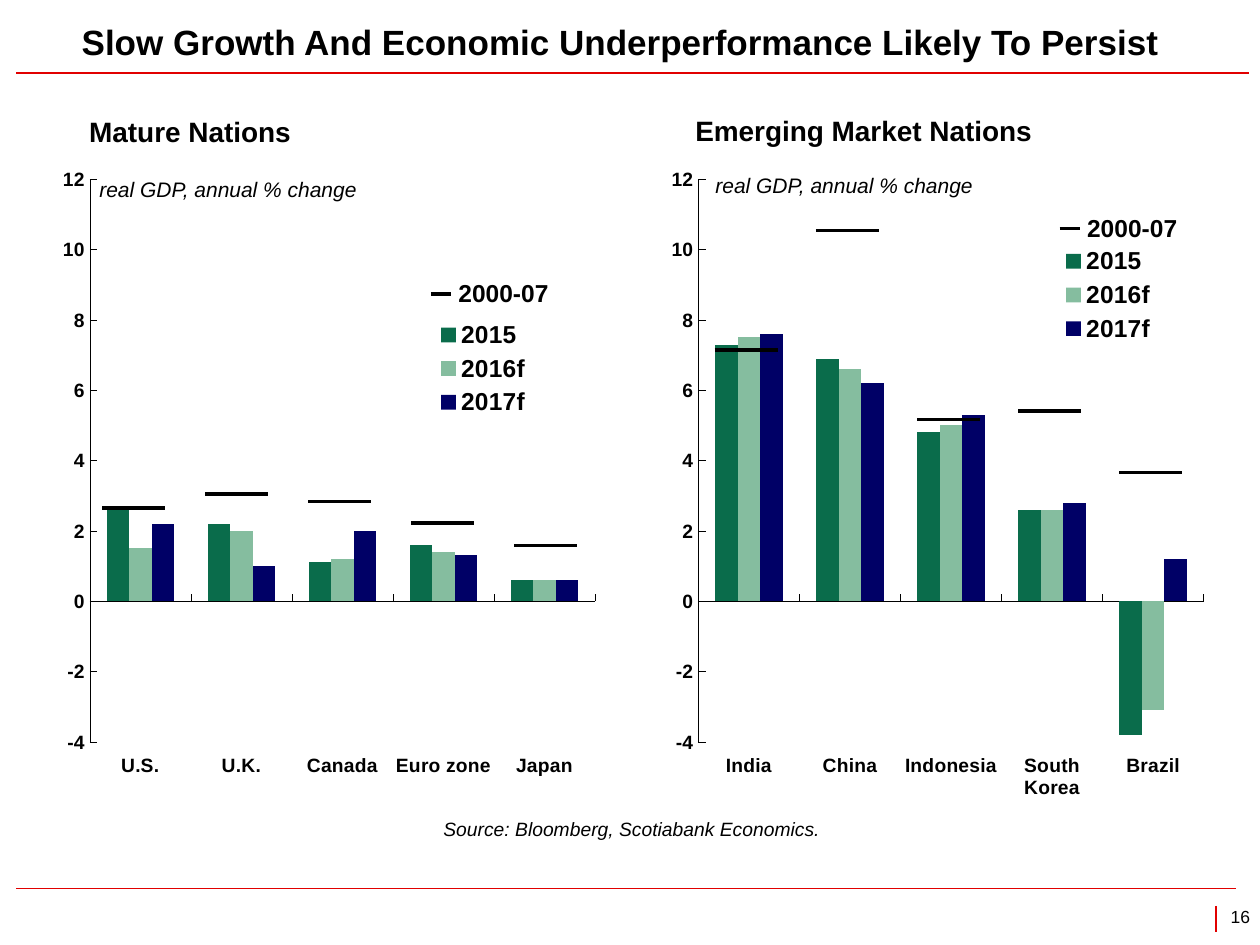
from dataclasses import dataclass

from lxml.etree import SubElement
from pptx import Presentation
from pptx.chart.data import CategoryChartData
from pptx.dml.color import RGBColor
from pptx.enum.chart import XL_CHART_TYPE, XL_LEGEND_POSITION, XL_TICK_LABEL_POSITION, XL_TICK_MARK
from pptx.enum.shapes import MSO_CONNECTOR
from pptx.enum.text import MSO_ANCHOR, PP_ALIGN
from pptx.oxml import parse_xml
from pptx.oxml.ns import nsdecls, qn
from pptx.util import Inches, Pt

COLUMNS, ROWS = 100, 75
CELL = Inches(0.1)
FONT = "Arial"
COLORS = {"text": "000000", "rule": "E10000",
          "2015": "0A6C4B", "2016f": "85BD9F", "2017f": "000066"}
AXIS_LOW, AXIS_HIGH = -4, 12
PLOT = (0.074, 0.027, 0.92, 0.841)
MARK_LENGTH = 5


@dataclass
class Box:
    """An area of the slide in columns and rows of the grid."""
    left: float
    top: float
    width: float
    height: float

    def share(self, x, y, width, height):
        return Box(self.left + x * self.width, self.top + y * self.height,
                   width * self.width, height * self.height)

    def offset(self, x, y, width, height):
        return Box(self.left + x, self.top + y, width, height)

    def lengths(self):
        return [round(value * CELL) for value in (self.left, self.top, self.width, self.height)]


def color(name):
    return RGBColor.from_string(COLORS[name])


def set_font(font, size, bold=False, italic=False):
    font.name, font.size = FONT, Pt(size)
    font.bold, font.italic = bold, italic
    font.color.rgb = color("text")


def add_text(slide, box, text, size=12, bold=False, italic=False,
             align=PP_ALIGN.LEFT, anchor=MSO_ANCHOR.TOP, inset=True):
    frame = slide.shapes.add_textbox(*box.lengths()).text_frame
    frame.word_wrap = True
    frame.vertical_anchor = anchor
    if not inset:
        frame.margin_left = frame.margin_right = frame.margin_top = frame.margin_bottom = 0
    paragraph = frame.paragraphs[0]
    paragraph.alignment = align
    run = paragraph.add_run()
    run.text = text
    set_font(run.font, size, bold, italic)


def add_line(slide, box, color_name="text", weight=2):
    left, top, width, height = box.lengths()
    line = slide.shapes.add_connector(MSO_CONNECTOR.STRAIGHT, left, top, left + width, top + height)
    line.line.color.rgb = color(color_name)
    line.line.width = Pt(weight)
    SubElement(line._element.spPr, qn("a:effectLst"))


def manual_layout(shares, inner=False):
    target = '<c:layoutTarget val="inner"/>' if inner else ""
    modes = '<c:xMode val="edge"/><c:yMode val="edge"/>'
    sizes = "".join(f'<c:{key} val="{share}"/>' for key, share in zip("xywh", shares))
    return parse_xml(f'<c:layout {nsdecls("c")}><c:manualLayout>{target}{modes}{sizes}'
                     '</c:manualLayout></c:layout>')


def style_axis(axis):
    axis.has_major_gridlines = False
    axis.major_tick_mark = XL_TICK_MARK.INSIDE
    axis.minor_tick_mark = XL_TICK_MARK.NONE
    axis.format.line.color.rgb = color("text")
    axis.format.line.width = Pt(0.25)
    set_font(axis.tick_labels.font, 11, bold=True)


def add_growth_chart(slide, box, countries, growth, legend_shares):
    data = CategoryChartData(number_format="0.0")
    data.categories = countries
    for year, values in growth.items():
        data.add_series(year, values)
    chart = slide.shapes.add_chart(XL_CHART_TYPE.COLUMN_CLUSTERED, *box.lengths(), data).chart
    chart.has_title = False
    set_font(chart.font, 12)

    style_axis(chart.category_axis)
    chart.category_axis.tick_label_position = XL_TICK_LABEL_POSITION.LOW
    value_axis = chart.value_axis
    style_axis(value_axis)
    value_axis.minimum_scale, value_axis.maximum_scale = AXIS_LOW, AXIS_HIGH
    value_axis.major_unit = 2
    value_axis.tick_labels.number_format = "0"
    value_axis.tick_labels.number_format_is_linked = False

    plot = chart.plots[0]
    plot.gap_width, plot.overlap = 150, 0
    plot.vary_by_categories = False
    for series in plot.series:
        series.invert_if_negative = False
        series.format.fill.solid()
        series.format.fill.fore_color.rgb = color(series.name)

    chart.has_legend = True
    legend = chart.legend
    legend.position = XL_LEGEND_POSITION.RIGHT
    legend.include_in_layout = True
    set_font(legend.font, 14, bold=True)
    legend._element.find(qn("c:legendPos")).addnext(manual_layout(legend_shares))
    plot_area = chart._chartSpace.chart.plotArea
    for layout in plot_area.findall(qn("c:layout")):
        plot_area.remove(layout)
    plot_area.insert(0, manual_layout(PLOT, inner=True))


def add_average_marks(slide, plot_box, averages, first, pitch):
    """Draw one level mark per country at its 2000-07 average."""
    row_per_point = plot_box.height / (AXIS_HIGH - AXIS_LOW)
    for index, average in enumerate(averages):
        add_line(slide, plot_box.offset(first + index * pitch,
                                        (AXIS_HIGH - average) * row_per_point, MARK_LENGTH, 0))


def add_panel(slide, box, heading, heading_at, unit_at, key_at, countries, growth,
              averages, first_mark, mark_pitch, legend_shares):
    add_text(slide, box.offset(*heading_at, 43.3, 3.7), heading, size=16, bold=True)
    add_growth_chart(slide, box, countries, growth, legend_shares)
    add_text(slide, box.offset(*unit_at, 24.7, 3), "real GDP, annual % change", italic=True)
    key = box.offset(*key_at, 15.6, 3.4)
    add_text(slide, key, "2000-07", size=14, bold=True)
    add_line(slide, key.offset(-1.2, 1.75, 1.6, 0))
    add_average_marks(slide, box.share(*PLOT), averages, first_mark, mark_pitch)


def add_header(slide, box):
    add_text(slide, box.offset(4.2, 0, 95.3, 5),
             "Slow Growth And Economic Underperformance Likely To Persist",
             size=20, bold=True, anchor=MSO_ANCHOR.MIDDLE)
    add_line(slide, box.offset(0, box.height, box.width, 0), "rule", 0.75)


def add_footer(slide, box):
    add_text(slide, box.offset(1.5, -6.1, 94.7, 2.8), "Source: Bloomberg, Scotiabank Economics.",
             size=11, italic=True, align=PP_ALIGN.CENTER)
    add_line(slide, box.offset(0, 0, box.width, 0), "rule", 0.75)
    add_line(slide, box.offset(95.2, 1.4, 0, 2.1), "rule", 0.75)
    add_text(slide, box.offset(94.4, 1.4, 3.5, 1.7), "16", size=10,
             align=PP_ALIGN.RIGHT, inset=False)


def main():
    presentation = Presentation()
    presentation.slide_width, presentation.slide_height = COLUMNS * CELL, ROWS * CELL
    slide = presentation.slides.add_slide(presentation.slide_layouts[6])
    add_header(slide, Box(1.3, 0.8, 97.8, 5))
    add_panel(
        slide, Box(3.9, 12.8, 43.6, 53.1), "Mature Nations",
        heading_at=(2.2, -4.2), unit_at=(3, 0.7), key_at=(31.5, 8.8),
        countries=["U.S.", "U.K.", "Canada", "Euro zone", "Japan"],
        growth={"2015": [2.6, 2.2, 1.1, 1.6, 0.6],
                "2016f": [1.5, 2, 1.2, 1.4, 0.6],
                "2017f": [2.2, 1, 2, 1.3, 0.6]},
        averages=[2.66, 3.05, 2.84, 2.23, 1.59], first_mark=1, mark_pitch=8.17,
        legend_shares=(0.7, 0.23, 0.18, 0.16))
    add_panel(
        slide, Box(52.2, 12.8, 43.6, 53.1), "Emerging Market Nations",
        heading_at=(2, -4.3), unit_at=(3.6, 0.4), key_at=(33.1, 3.6),
        countries=["India", "China", "Indonesia", "South Korea", "Brazil"],
        growth={"2015": [7.3, 6.9, 4.8, 2.6, -3.8],
                "2016f": [7.5, 6.6, 5, 2.6, -3.1],
                "2017f": [7.6, 6.2, 5.3, 2.8, 1.2]},
        averages=[7.14, 10.54, 5.17, 5.42, 3.66], first_mark=1.3, mark_pitch=8.03,
        legend_shares=(0.73, 0.12, 0.18, 0.16))
    add_footer(slide, Box(1.3, 70.5, 96.8, 4.5))
    presentation.save("out.pptx")


if __name__ == "__main__":
    main()
